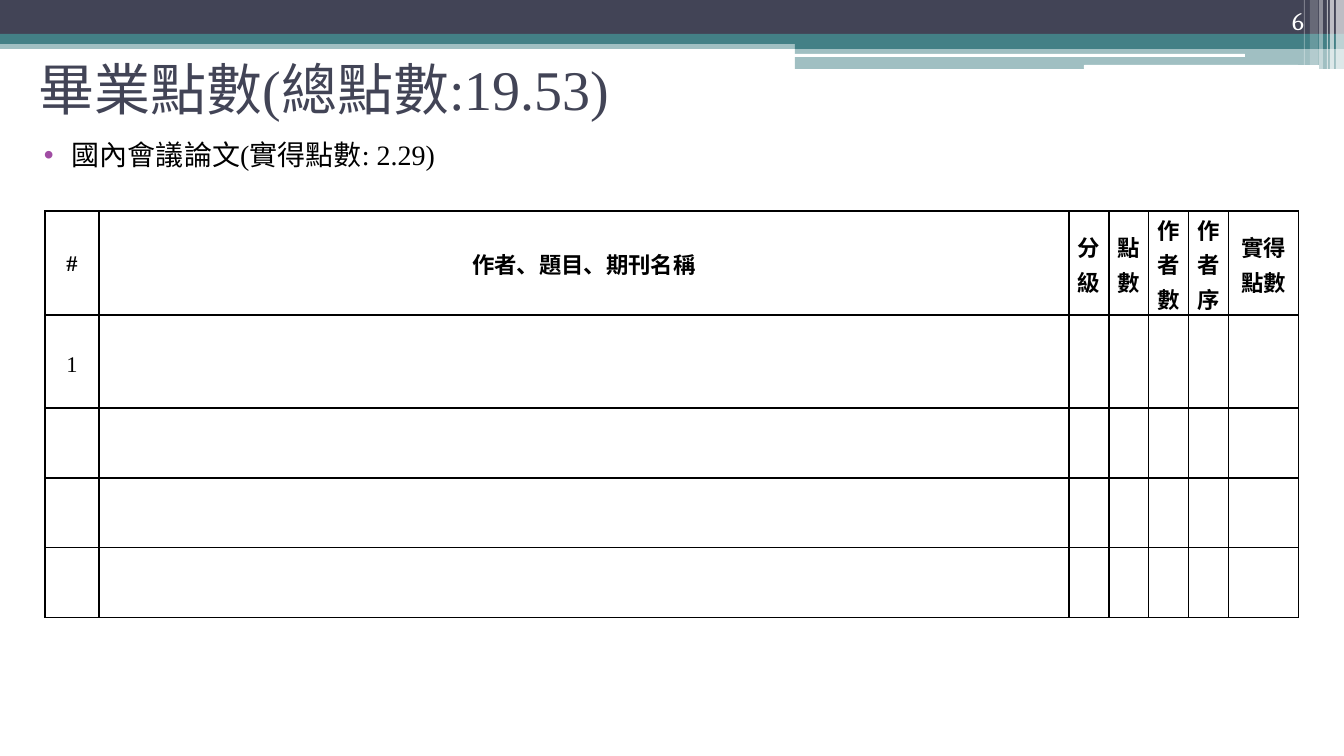
from lxml.etree import SubElement
from pptx import Presentation
from pptx.dml.color import RGBColor
from pptx.enum.shapes import MSO_SHAPE as Shape
from pptx.enum.text import MSO_ANCHOR as Anchor, PP_ALIGN as Align
from pptx.oxml.ns import qn
from pptx.util import Pt

PX = 914400 / 100.8
NAVY, TEAL, WHITE, BLACK, PURPLE = "424456", "438086", "FFFFFF", "000000", "A04DA3"
SERIF = "Times New Roman"

# left, top, width, height, colour, opacity in percent
BANDS = [
    (0, 40, 1344, 9, TEAL, 50),
    (0, 0, 1344, 34, NAVY, 100),
    (0, 34, 1344, 10, TEAL, 100),
    (795, 39, 549, 10, TEAL, 100),
    (795, 49, 549, 20, TEAL, 50),
]
GROOVES = [(794, 54, 451, 3, WHITE, 100), (1084, 65, 235, 4, WHITE, 100)]
# left, width, height, opacity in percent
STRIPES = [
    (1336, 8, 69, 65), (1330, 4, 69, 65), (1327, 1, 69, 60),
    (1319, 4, 69, 40), (1310, 8, 65, 20), (1304, 1, 65, 30),
]
TITLE = "畢業點數(總點數:19.53)"
BULLET = "國內會議論文(實得點數: 2.29)"
PAGE_NUMBER = "6"
HEADERS = ["#", "作者、題目、期刊名稱", "分級", "點數", "作者數", "作者序", "實得點數"]
FIRST_ENTRY = "1"
COLUMNS = [54, 970, 40, 40, 40, 40, 70]
ROWS = [104, 93, 70, 70, 70]
TABLE_LEFT, TABLE_TOP = 45, 211


def px(length):
    return round(length * PX)


def rgb(colour):
    return RGBColor.from_string(colour)


def add_band(page, kind, left, top, width, height, colour, opacity):
    band = page.shapes.add_shape(kind, px(left), px(top), px(width), px(height))
    band.shadow.inherit = False
    band.line.fill.background()
    band.fill.solid()
    band.fill.fore_color.rgb = rgb(colour)
    if opacity < 100:
        tint = band.fill._xPr.find(".//" + qn("a:srgbClr"))
        SubElement(tint, qn("a:alpha"), val=str(opacity * 1000))


def style(para, size, colour, font=SERIF, bold=False):
    for span in para.runs:
        span.font.size = Pt(size)
        span.font.name = font
        span.font.bold = bold
        span.font.color.rgb = rgb(colour)


def add_text(page, place, text, size, colour, anchor, font=SERIF):
    box = page.shapes.add_textbox(*map(px, place))
    frame = box.text_frame
    frame.word_wrap = True
    frame.vertical_anchor = anchor
    frame.text = text
    para = frame.paragraphs[0]
    style(para, size, colour, font)
    return para


def add_bullet(para, indent, hanging):
    props = para._p.get_or_add_pPr()
    props.set("marL", str(px(indent)))
    props.set("indent", str(-px(hanging)))
    SubElement(SubElement(props, qn("a:buClr")), qn("a:srgbClr"), val=PURPLE)
    SubElement(props, qn("a:buFont"), typeface="Arial")
    SubElement(props, qn("a:buChar"), char="•")


def outline(cell):
    """Leave the cell unfilled, with a thin black line on each side."""
    props = cell._tc.get_or_add_tcPr()
    for side in ("a:lnL", "a:lnR", "a:lnT", "a:lnB"):
        line = SubElement(props, qn(side), w=str(Pt(1)))
        SubElement(SubElement(line, qn("a:solidFill")), qn("a:srgbClr"), val=BLACK)
    cell.fill.background()


def write_cell(cell, text, spacing, bold):
    cell.text = text
    cell.vertical_anchor = Anchor.MIDDLE
    cell.margin_left = cell.margin_right = px(7)
    cell.margin_top = cell.margin_bottom = 0
    para = cell.text_frame.paragraphs[0]
    para.alignment = Align.CENTER
    para.line_spacing = spacing
    style(para, 16, BLACK, bold=bold)


def add_points_table(page):
    frame = page.shapes.add_table(
        len(ROWS), len(COLUMNS), px(TABLE_LEFT), px(TABLE_TOP),
        px(sum(COLUMNS)), px(sum(ROWS)))
    table = frame.table
    table.first_row = table.horz_banding = False
    for column, width in zip(table.columns, COLUMNS):
        column.width = px(width)
    for row, height in zip(table.rows, ROWS):
        row.height = px(height)
    for cell in table.iter_cells():
        outline(cell)
    for index, header in enumerate(HEADERS):
        write_cell(table.cell(0, index), header, 1.07, True)
    write_cell(table.cell(1, 0), FIRST_ENTRY, 1.3, False)


def main():
    deck = Presentation()
    deck.slide_width, deck.slide_height = px(1344), px(756)
    page = deck.slides.add_slide(deck.slide_layouts[6])

    for band in BANDS:
        add_band(page, Shape.RECTANGLE, *band)
    for groove in GROOVES:
        add_band(page, Shape.ROUNDED_RECTANGLE, *groove)
    for left, width, height, opacity in STRIPES:
        add_band(page, Shape.RECTANGLE, left, 0, width, height, WHITE, opacity)

    title = add_text(page, (29, 12, 1210, 118), TITLE, 40, NAVY, Anchor.MIDDLE)
    title.line_spacing = 1.5
    topic = add_text(page, (21, 116, 1210, 555), BULLET, 20, BLACK, Anchor.TOP)
    topic.line_spacing = 1.5
    topic.space_before = Pt(3)
    add_bullet(topic, 41, 28)
    number = add_text(page, (1202, 0, 112, 41), PAGE_NUMBER, 18, WHITE,
                      Anchor.BOTTOM, "Cambria")
    number.alignment = Align.RIGHT

    add_points_table(page)
    deck.save("out.pptx")


if __name__ == "__main__":
    main()
